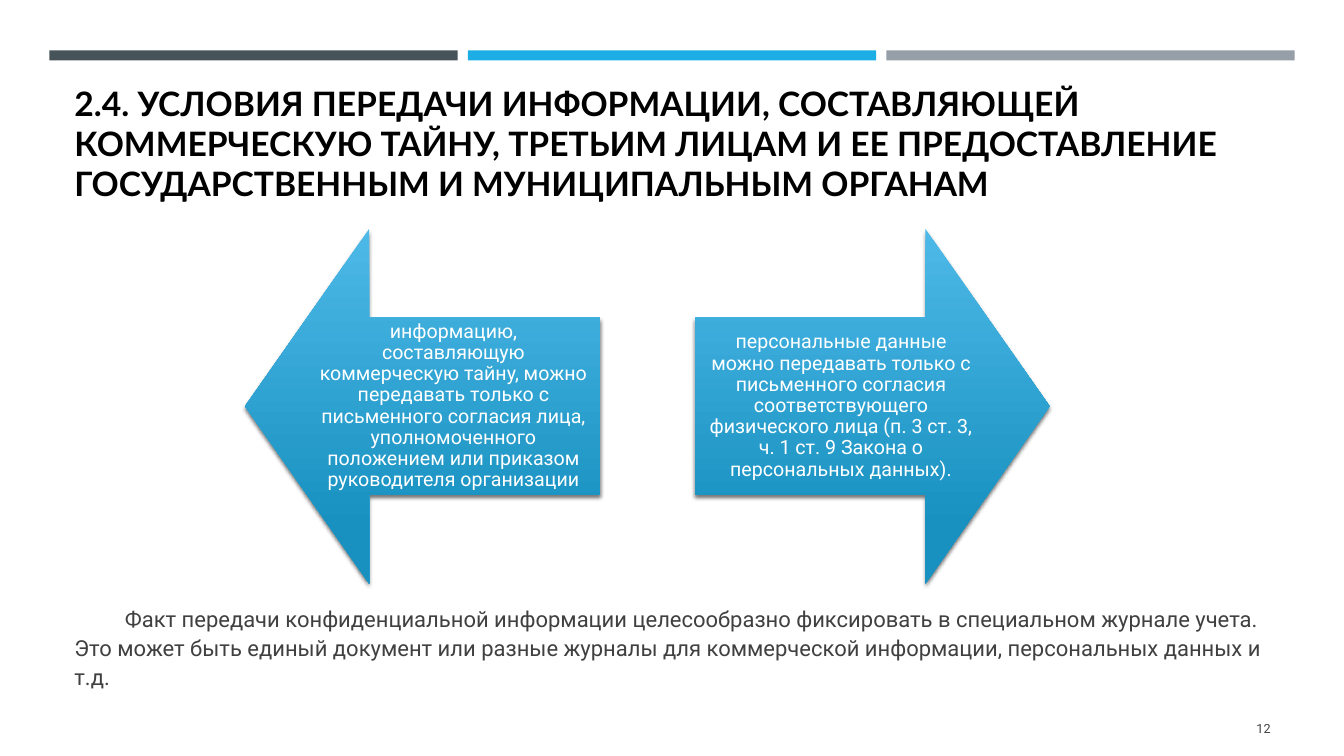
import lxml.etree
import pptx
import pptx.dml.color
import pptx.enum.shapes
import pptx.enum.text
import pptx.oxml.ns
import pptx.util

Inches = pptx.util.Inches
Pt = pptx.util.Pt
Shape = pptx.enum.shapes.MSO_SHAPE
Anchor = pptx.enum.text.MSO_ANCHOR
Align = pptx.enum.text.PP_ALIGN
qn = pptx.oxml.ns.qn

TITLE = ("2.4. УСЛОВИЯ ПЕРЕДАЧИ ИНФОРМАЦИИ, СОСТАВЛЯЮЩЕЙ КОММЕРЧЕСКУЮ ТАЙНУ, ТРЕТЬИМ ЛИЦАМ "
         "И ЕЕ ПРЕДОСТАВЛЕНИЕ ГОСУДАРСТВЕННЫМ И МУНИЦИПАЛЬНЫМ ОРГАНАМ")
TRADE_SECRET = ("информацию, составляющую коммерческую тайну, можно передавать только с письменного "
                "согласия лица, уполномоченного положением или приказом руководителя организации")
PERSONAL_DATA = ("персональные данные можно передавать только с письменного согласия соответствующего "
                 "физического лица (п. 3 ст. 3, ч. 1 ст. 9 Закона о персональных данных).")
JOURNAL = ("Факт передачи конфиденциальной информации целесообразно фиксировать в специальном журнале "
           "учета. Это может быть единый документ или разные журналы для коммерческой информации, "
           "персональных данных и т.д.")


def color(value):
    """Turn a hex string into a colour."""
    return pptx.dml.color.RGBColor.from_string(value)


def write(shape, text, size, font, ink, anchor, align=Align.LEFT, bold=False):
    """Put one formatted paragraph into a shape and return it."""
    frame = shape.text_frame
    frame.word_wrap = True
    frame.vertical_anchor = anchor
    frame.text = text
    para = frame.paragraphs[0]
    para.alignment = align
    span = para.runs[0]
    span.font.size = Pt(size)
    span.font.name = font
    span.font.bold = bold
    span.font.color.rgb = color(ink)
    return para


def add_text(page, left, top, width, height, *style, **options):
    """Add a text box and return its paragraph."""
    box = page.shapes.add_textbox(Inches(left), Inches(top), Inches(width), Inches(height))
    return write(box, *style, **options)


def add_bar(page, left, fill):
    """Add one bar of the header strip."""
    bar = page.shapes.add_shape(Shape.RECTANGLE, Inches(left), Inches(0.5), Inches(4.05), Inches(0.1))
    bar.shadow.inherit = False
    bar.fill.solid()
    bar.fill.fore_color.rgb = color(fill)
    bar.line.fill.background()


def add_shadow(shape):
    """Give a shape a soft shadow straight below it."""
    shape.shadow.inherit = False
    effects = shape.element.spPr.find(qn("a:effectLst"))
    shadow = lxml.etree.SubElement(effects, qn("a:outerShdw"), blurRad=str(Pt(3)), dist=str(Pt(2)),
                                   dir="5400000", algn="ctr", rotWithShape="0")
    black = lxml.etree.SubElement(shadow, qn("a:srgbClr"), val="000000")
    lxml.etree.SubElement(black, qn("a:alpha"), val="55000")


def add_arrow(page, kind, left, text):
    """Add a gradient block arrow with its text."""
    arrow = page.shapes.add_shape(kind, Inches(left), Inches(2.27), Inches(3.52), Inches(3.52))
    arrow.adjustments[0] = 0.5
    arrow.adjustments[1] = 0.35
    arrow.line.fill.background()
    arrow.fill.gradient()
    arrow.fill.gradient_angle = 270
    for stop, (position, tint) in zip(arrow.fill.gradient_stops, [(0, "4DB9E8"), (0.84, "1891C0")]):
        stop.position = position
        stop.color.rgb = color(tint)
    add_shadow(arrow)
    frame = arrow.text_frame
    frame.margin_left = frame.margin_right = frame.margin_top = frame.margin_bottom = Inches(0.11)
    para = write(arrow, text, 14, "Roboto", "FFFFFF", Anchor.MIDDLE, Align.CENTER)
    para.line_spacing = 0.9


def main():
    """Build the slide and save it."""
    deck = pptx.Presentation()
    deck.slide_width = Inches(13.33)
    deck.slide_height = Inches(7.5)
    page = deck.slides.add_slide(deck.slide_layouts[6])
    for index, fill in enumerate(["465359", "1CADE4", "969FA7"]):
        add_bar(page, 0.49 + 4.15 * index, fill)
    add_text(page, 0.64, 0.77, 12.06, 1.3, TITLE, 24, "Lato", "000000", Anchor.BOTTOM, bold=True)
    add_arrow(page, Shape.LEFT_ARROW, 2.43, TRADE_SECRET)
    add_arrow(page, Shape.RIGHT_ARROW, 6.89, PERSONAL_DATA)
    journal = add_text(page, 0.64, 5.97, 12.06, 0.88, JOURNAL, 15.7, "Roboto", "404040", Anchor.MIDDLE)
    journal.line_spacing = 1.1
    journal.space_before = Pt(3)
    journal.space_after = Pt(6)
    journal._p.get_or_add_pPr().set("indent", str(Inches(0.5)))
    add_text(page, 11.55, 7.03, 1.15, 0.4, "12", 9, "Roboto", "404040", Anchor.MIDDLE, Align.RIGHT)
    deck.save("out.pptx")


if __name__ == "__main__":
    main()
